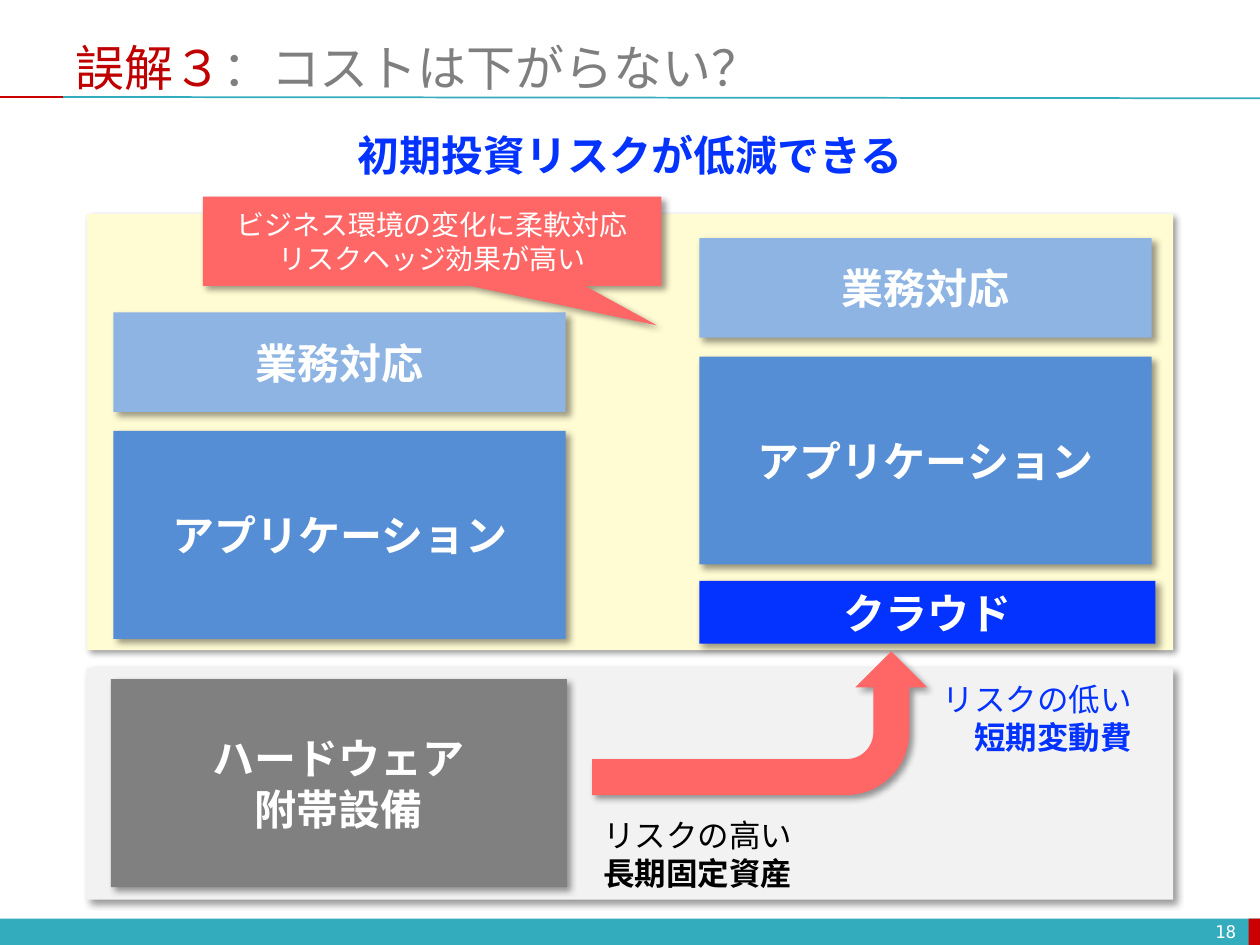
from dataclasses import dataclass
from typing import Optional

import pptx
import pptx.dml.color
import pptx.enum.shapes
import pptx.enum.text
import pptx.oxml
import pptx.oxml.ns
import pptx.util

RGBColor = pptx.dml.color.RGBColor
Shape = pptx.enum.shapes.MSO_SHAPE
Align = pptx.enum.text.PP_ALIGN
Anchor = pptx.enum.text.MSO_ANCHOR
AutoSize = pptx.enum.text.MSO_AUTO_SIZE

COLUMNS, ROWS = 100, 75
WIDTH, HEIGHT = pptx.util.Inches(10), pptx.util.Inches(7.5)

WHITE = RGBColor(0xFF, 0xFF, 0xFF)
BLACK = RGBColor(0x00, 0x00, 0x00)
TEAL = RGBColor(0x33, 0xAC, 0xBD)
RED = RGBColor(0xCC, 0x00, 0x00)
DARK_RED = RGBColor(0xC0, 0x00, 0x00)
CORAL = RGBColor(0xFF, 0x66, 0x66)
GREY = RGBColor(0x80, 0x80, 0x80)
TITLE_GREY = RGBColor(0x7F, 0x7F, 0x7F)
PALE_GREY = RGBColor(0xF2, 0xF2, 0xF2)
CREAM = RGBColor(0xFF, 0xFB, 0xD2)
BLUE = RGBColor(0x55, 0x8E, 0xD5)
LIGHT_BLUE = RGBColor(0x8E, 0xB4, 0xE3)
VIVID_BLUE = RGBColor(0x04, 0x32, 0xFF)

JAPANESE_FONT = "Noto Sans CJK JP"
SHADOW_XML = (
    f'<a:effectLst {pptx.oxml.ns.nsdecls("a")}>'
    '<a:outerShdw blurRad="50800" dist="38100" dir="2700000" algn="tl" rotWithShape="0">'
    '<a:srgbClr val="000000"><a:alpha val="40000"/></a:srgbClr>'
    "</a:outerShdw></a:effectLst>"
)


@dataclass(frozen=True)
class Area:
    """A place on the slide, in grid columns and rows."""
    column: float
    row: float
    columns: float
    rows: float

    def lengths(self) -> tuple[int, int, int, int]:
        return (across(self.column), down(self.row), across(self.columns), down(self.rows))


@dataclass(frozen=True)
class Words:
    text: str
    size: float
    color: RGBColor = WHITE
    bold: bool = False
    font: str = JAPANESE_FONT


Paragraphs = list[list[Words]]


@dataclass(frozen=True)
class Block:
    area: Area
    fill: RGBColor
    lines: tuple[str, ...] = ()
    size: float = 24
    bold: bool = True
    kind: Shape = Shape.RECTANGLE
    shadow: bool = True


@dataclass(frozen=True)
class Label:
    area: Area
    paragraphs: Paragraphs
    align: Align = Align.LEFT
    anchor: Anchor = Anchor.TOP
    grows: bool = True


def across(columns: float) -> int:
    return round(WIDTH * columns / COLUMNS)


def down(rows: float) -> int:
    return round(HEIGHT * rows / ROWS)


def write(frame, paragraphs: Paragraphs, align: Align) -> None:
    for index, line in enumerate(paragraphs):
        para = frame.paragraphs[0] if index == 0 else frame.add_paragraph()
        para.alignment = align
        for words in line:
            span = para.add_run()
            span.text = words.text
            span.font.size = pptx.util.Pt(words.size)
            span.font.bold = words.bold
            span.font.name = words.font
            span.font.color.rgb = words.color
            east_asian = pptx.oxml.parse_xml(
                f'<a:ea {pptx.oxml.ns.nsdecls("a")} typeface="{JAPANESE_FONT}"/>')
            span.font._element.find(pptx.oxml.ns.qn("a:latin")).addnext(east_asian)


def draw_block(page, block: Block):
    box = page.shapes.add_shape(block.kind, *block.area.lengths())
    box.fill.solid()
    box.fill.fore_color.rgb = block.fill
    box.line.fill.background()
    box.shadow.inherit = False
    if block.shadow:
        properties = box._element.spPr
        plain = properties.find(pptx.oxml.ns.qn("a:effectLst"))
        properties.replace(plain, pptx.oxml.parse_xml(SHADOW_XML))
    if block.lines:
        frame = box.text_frame
        frame.word_wrap = True
        frame.vertical_anchor = Anchor.MIDDLE
        write(frame, [[Words(line, block.size, WHITE, block.bold)] for line in block.lines],
              Align.CENTER)
    return box


def draw_label(page, label: Label) -> None:
    frame = page.shapes.add_textbox(*label.area.lengths()).text_frame
    frame.word_wrap = not label.grows
    frame.auto_size = AutoSize.SHAPE_TO_FIT_TEXT if label.grows else AutoSize.NONE
    frame.vertical_anchor = label.anchor
    write(frame, label.paragraphs, label.align)


def draw_rule(page, start: tuple[float, float], end: tuple[float, float], color: RGBColor) -> None:
    rule = page.shapes.add_connector(
        pptx.enum.shapes.MSO_CONNECTOR.STRAIGHT,
        across(start[0]), down(start[1]), across(end[0]), down(end[1]))
    rule.line.color.rgb = color
    rule.line.width = pptx.util.Pt(1)
    rule._element.spPr.append(
        pptx.oxml.parse_xml(f'<a:effectLst {pptx.oxml.ns.nsdecls("a")}/>'))


def draw_software(page, column: float, row: float) -> None:
    """Stack the business layer over the application, from the given top row."""
    draw_block(page, Block(Area(column, row + 9.4, 35.9, 16.5), BLUE, ("アプリケーション",)))
    draw_block(page, Block(Area(column, row, 35.9, 7.9), LIGHT_BLUE, ("業務対応",)))


def draw_frame(page) -> None:
    draw_block(page, Block(Area(0, 72.9, 100, 2.2), TEAL, shadow=False))
    draw_block(page, Block(Area(99.1, 72.9, 1, 2.2), RED, shadow=False))
    draw_rule(page, (5, 7.7), (100, 7.8), TEAL)
    draw_rule(page, (0, 7.7), (5, 7.7), RED)
    title = [Words("誤解３", 28, DARK_RED, font="Calibri"),
             Words("：コストは下がらない？", 28, TITLE_GREY, font="Calibri")]
    draw_label(page, Label(Area(5, 3, 95, 4.6), [title], anchor=Anchor.MIDDLE, grows=False))
    number = [Words("18", 10, font="DejaVu Sans Mono")]
    draw_label(page, Label(Area(75.8, 72.7, 23.3, 2.4), [number],
                           Align.RIGHT, Anchor.MIDDLE, grows=False))


def draw_comparison(page) -> None:
    draw_block(page, Block(Area(6.9, 53, 86.2, 18.4), PALE_GREY))
    draw_block(page, Block(Area(6.9, 17, 86.2, 34.6), CREAM))
    draw_block(page, Block(Area(8.8, 53.9, 36.2, 16.5), GREY, ("ハードウェア", "附帯設備")))
    draw_software(page, 9, 24.8)
    draw_software(page, 55.5, 18.9)
    draw_block(page, Block(Area(55.5, 46.1, 36.2, 5), VIVID_BLUE, ("クラウド",)))

    arrow = draw_block(page, Block(Area(54.6, 44.1, 11.4, 26.6), CORAL, kind=Shape.BENT_ARROW))
    arrow.rotation = 90
    arrow._element.spPr.xfrm.set("flipH", "1")

    draw_label(page, Label(Area(73.6, 53.5, 17.2, 7.1),
                           [[Words("リスクの低い", 18, VIVID_BLUE)],
                            [Words("短期変動費", 18, VIVID_BLUE, True)]], Align.RIGHT))
    draw_label(page, Label(Area(46.9, 64.3, 17.2, 7.1),
                           [[Words("リスクの高い", 18, BLACK)],
                            [Words("長期固定資産", 18, BLACK, True)]]))

    callout = draw_block(page, Block(
        Area(16.1, 15.6, 36.4, 7.1), CORAL,
        ("ビジネス環境の変化に柔軟対応", "リスクヘッジ効果が高い"),
        size=16, bold=False, kind=Shape.RECTANGULAR_CALLOUT))
    callout.adjustments[0] = 0.49
    callout.adjustments[1] = 0.94
    draw_label(page, Label(Area(27.1, 9.8, 45.8, 5),
                           [[Words("初期投資リスクが低減できる", 24, VIVID_BLUE, True)]],
                           Align.CENTER))


def main() -> None:
    deck = pptx.Presentation()
    deck.slide_width, deck.slide_height = WIDTH, HEIGHT
    page = deck.slides.add_slide(deck.slide_layouts[6])
    draw_frame(page)
    draw_comparison(page)
    deck.save("out.pptx")


if __name__ == "__main__":
    main()
